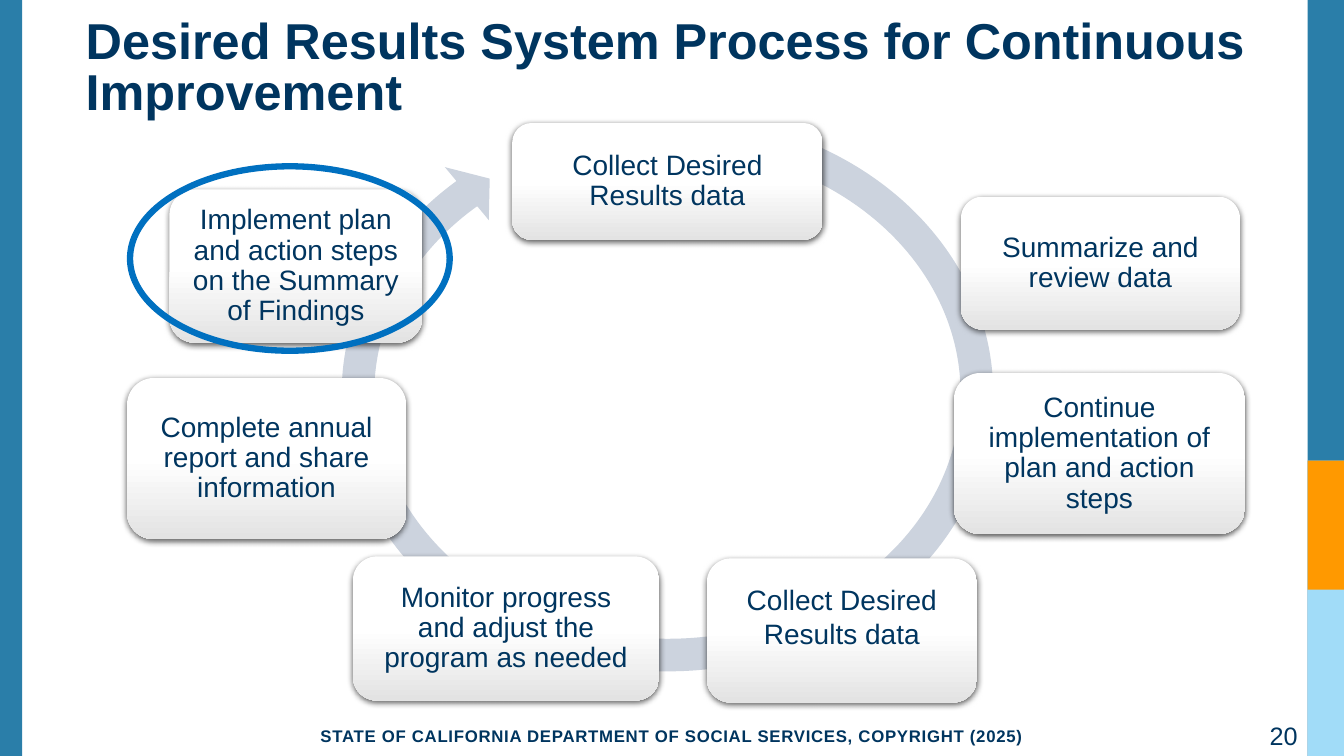
from lxml import etree
from pptx import Presentation
from pptx.dml.color import RGBColor
from pptx.enum.shapes import MSO_SHAPE
from pptx.enum.text import MSO_ANCHOR, MSO_AUTO_SIZE, PP_ALIGN
from pptx.oxml.ns import qn
from pptx.util import Inches, Pt

RECT, ROUNDED = MSO_SHAPE.RECTANGLE, MSO_SHAPE.ROUNDED_RECTANGLE
OVAL, CIRCULAR_ARROW = MSO_SHAPE.OVAL, MSO_SHAPE.CIRCULAR_ARROW
LEFT, CENTER, RIGHT = PP_ALIGN.LEFT, PP_ALIGN.CENTER, PP_ALIGN.RIGHT
MIDDLE, BOTTOM = MSO_ANCHOR.MIDDLE, MSO_ANCHOR.BOTTOM

NAVY, TEAL, SKY, ORANGE = "00355F", "2A7EA9", "A1DCF8", "FF9900"
RING, HIGHLIGHT, WHITE, GRAY = "CCD3DE", "0070C0", "FFFFFF", "E3E3E3"

TITLE = "Desired Results System Process for Continuous Improvement"
FOOTER = "STATE OF CALIFORNIA DEPARTMENT OF SOCIAL SERVICES, COPYRIGHT (2025)"
PAGE_NUMBER = "20"

# Side bands: left, top, width, height, color
BANDS = [
    (0, 0, 0.22, 7.5, TEAL),
    (12.97, 0, 0.36, 7.5, TEAL),
    (12.97, 4.57, 0.36, 2.93, SKY),
    (12.97, 4.57, 0.36, 1.28, ORANGE),
]

# Steps clockwise from the top: text, box, line spacing, bottom inset
STEPS = [
    ("Collect Desired Results data", (5.08, 1.22, 3.08, 1.16), 0.9, 0.14),
    ("Summarize and review data", (9.53, 1.95, 2.77, 1.32), 0.9, 0.14),
    ("Continue implementation of plan and action steps",
     (9.46, 3.7, 2.89, 1.6), 0.9, 0.14),
    ("Collect Desired Results data", (7.01, 5.54, 2.68, 1.43), 1.0, 0.42),
    ("Monitor progress and adjust the program as needed",
     (3.5, 5.52, 3.04, 1.43), 0.9, 0.14),
    ("Complete annual report and share information",
     (1.26, 3.75, 2.77, 1.6), 0.9, 0.14),
    ("Implement plan and action steps on the Summary of Findings",
     (1.68, 1.88, 2.51, 1.52), 0.9, 0.14),
]
STEP_INSET = 0.14
RING_BOX = (3.21, 0.96, 6.82, 5.88)
RING_ADJUSTMENTS = (0.055, 3.307, 134.908, 175.621, 0.058)
HIGHLIGHT_BOX = (1.29, 1.65, 3.17, 1.83)


def rgb(color):
    return RGBColor.from_string(color)


def inches(box):
    return [Inches(length) for length in box]


def add_flat_shape(slide, kind, box, fill=None):
    shape = slide.shapes.add_shape(kind, *inches(box))
    shape.shadow.inherit = False
    shape.line.fill.background()
    if fill:
        shape.fill.solid()
        shape.fill.fore_color.rgb = rgb(fill)
    else:
        shape.fill.background()
    return shape


def write(shape, text, size, align, anchor=MIDDLE, bold=False, spacing=1.0):
    frame = shape.text_frame
    frame.word_wrap = True
    frame.auto_size = MSO_AUTO_SIZE.NONE
    frame.vertical_anchor = anchor
    paragraph = frame.paragraphs[0]
    paragraph.alignment = align
    paragraph.line_spacing = spacing
    run = paragraph.add_run()
    run.text = text
    run.font.name = "Arial"
    run.font.size = Pt(size)
    run.font.bold = bold
    run.font.color.rgb = rgb(NAVY)
    return run


def add_drop_shadow(shape):
    effects = shape.element.spPr.find(qn("a:effectLst"))
    shadow = etree.SubElement(effects, qn("a:outerShdw"), blurRad=str(Pt(4.5)),
                              dist=str(Pt(1.5)), dir="5400000", rotWithShape="0")
    color = etree.SubElement(shadow, qn("a:srgbClr"), val="000000")
    etree.SubElement(color, qn("a:alpha"), val="63000")


def add_step(slide, text, box, spacing, bottom_inset):
    step = add_flat_shape(slide, ROUNDED, box)
    step.fill.gradient()
    step.fill.gradient_angle = 270
    for stop, position, color in zip(step.fill.gradient_stops, (0.5, 1), (WHITE, GRAY)):
        stop.position = position
        stop.color.rgb = rgb(color)
    add_drop_shadow(step)
    frame = step.text_frame
    frame.margin_left = frame.margin_right = frame.margin_top = Inches(STEP_INSET)
    frame.margin_bottom = Inches(bottom_inset)
    write(step, text, 20, CENTER, spacing=spacing)


def main():
    deck = Presentation()
    deck.slide_width, deck.slide_height = Inches(13.33), Inches(7.5)
    slide = deck.slides.add_slide(deck.slide_layouts[5])

    for *box, color in BANDS:
        add_flat_shape(slide, RECT, box, color)

    title = slide.shapes.title
    title.left, title.top, title.width, title.height = inches((0.75, 0.4, 11.8, 0.85))
    write(title, TITLE, 36, LEFT, BOTTOM, bold=True, spacing=0.85)

    ring = add_flat_shape(slide, CIRCULAR_ARROW, RING_BOX, RING)
    for index, value in enumerate(RING_ADJUSTMENTS):
        ring.adjustments[index] = value
    for step in STEPS:
        add_step(slide, *step)

    highlight = add_flat_shape(slide, OVAL, HIGHLIGHT_BOX)
    highlight.line.color.rgb = rgb(HIGHLIGHT)
    highlight.line.width = Pt(4.5)

    footer = slide.shapes.add_textbox(*inches((2.87, 7.1, 7.59, 0.4)))
    footer_run = write(footer, FOOTER, 12, CENTER, bold=True)
    footer_run.font._element.set("spc", "50")
    page_number = slide.shapes.add_textbox(*inches((9.97, 7.1, 3, 0.4)))
    write(page_number, PAGE_NUMBER, 18, RIGHT)

    deck.save("out.pptx")


if __name__ == "__main__":
    main()
